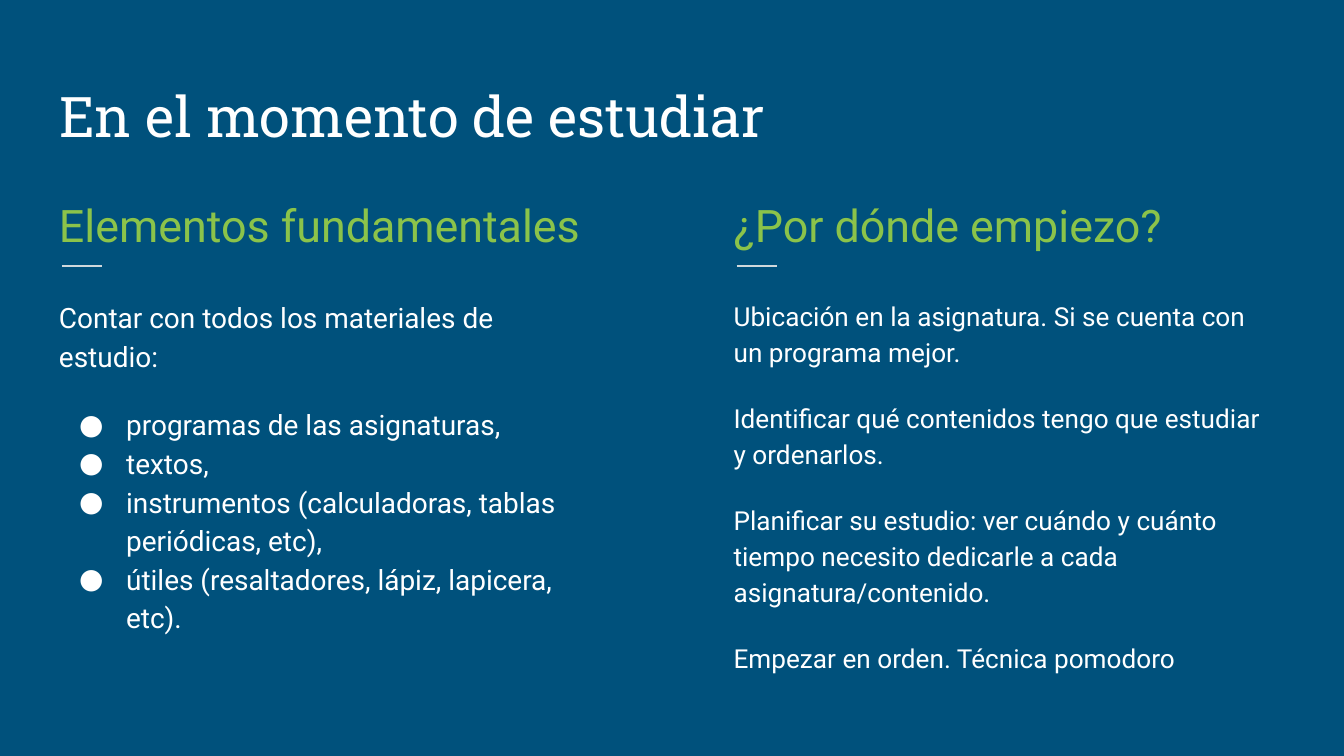
import pptx
import pptx.util
import pptx.dml.color
import pptx.enum.shapes
import pptx.enum.text
import pptx.oxml.ns
import lxml.etree

TITLE = "En el momento de estudiar"
COLUMNS = [
    {
        "left": 0.34,
        "heading": "Elementos fundamentales",
        "size": 15,
        "space_after": 0,
        "items": [
            ("text", "Contar con todos los materiales de estudio:"),
            ("bullet", "programas de las asignaturas,"),
            ("bullet", "textos,"),
            ("bullet", "instrumentos (calculadoras, tablas periódicas, etc),"),
            ("bullet", "útiles (resaltadores, lápiz, lapicera, etc)."),
        ],
    },
    {
        "left": 5.36,
        "heading": "¿Por dónde empiezo?",
        "size": 14,
        "space_after": 16,
        "items": [
            ("text", "Ubicación en la asignatura. Si se cuenta con un programa mejor."),
            ("text", "Identificar qué contenidos tengo que estudiar y ordenarlos."),
            ("text", "Planificar su estudio: ver cuándo y cuánto tiempo necesito "
                     "dedicarle a cada asignatura/contenido."),
            ("text", "Empezar en orden. Técnica pomodoro"),
        ],
    },
]
THEME = {
    "background": "00517C", "text": "FFFFFF", "heading": "8BC34A", "rule": "CFD8DC",
    "title_font": "Roboto Slab", "body_font": "Roboto",
    "title_size": 30, "heading_size": 24,
    "line_spacing": 1.15, "gap": 16, "rule_width": 0.75,
}
COLUMN_WIDTH = 4.21
INSET = 0.1
RULE_OFFSET, RULE_LENGTH, RULE_TOP = 0.12, 0.3, 1.98

Inches = pptx.util.Inches
Pt = pptx.util.Pt


def color(name):
    return pptx.dml.color.RGBColor.from_string(THEME[name])


def prepare_frame(box, anchor):
    frame = box.text_frame
    frame.word_wrap = True
    frame.auto_size = pptx.enum.text.MSO_AUTO_SIZE.NONE
    frame.vertical_anchor = anchor
    frame.margin_left = frame.margin_right = Inches(INSET)
    frame.margin_top = frame.margin_bottom = Inches(INSET)
    return frame


def write(para, text, font, size, ink):
    para.text = text
    para.alignment = pptx.enum.text.PP_ALIGN.LEFT
    for span in para.runs:
        span.font.name = THEME[font]
        span.font.size = Pt(size)
        span.font.color.rgb = color(ink)


def add_bullet(para):
    properties = para._p.get_or_add_pPr()
    properties.set("marL", str(Inches(0.5)))
    properties.set("indent", str(Inches(-0.35)))
    qn = pptx.oxml.ns.qn
    bullet_color = lxml.etree.SubElement(properties, qn("a:buClr"))
    lxml.etree.SubElement(bullet_color, qn("a:srgbClr"), val=THEME["text"])
    lxml.etree.SubElement(properties, qn("a:buFont"), typeface=THEME["body_font"])
    lxml.etree.SubElement(properties, qn("a:buChar"), char="●")


def add_text_box(slide, left, top, height):
    box = slide.shapes.add_textbox(
        Inches(left), Inches(top), Inches(COLUMN_WIDTH), Inches(height))
    return prepare_frame(box, pptx.enum.text.MSO_ANCHOR.TOP)


def add_rule(slide, left):
    rule = slide.shapes.add_connector(
        pptx.enum.shapes.MSO_CONNECTOR.STRAIGHT,
        Inches(left), Inches(RULE_TOP), Inches(left + RULE_LENGTH), Inches(RULE_TOP))
    rule.line.color.rgb = color("rule")
    rule.line.width = Pt(THEME["rule_width"])
    lxml.etree.SubElement(rule._element.spPr, pptx.oxml.ns.qn("a:effectLst"))


def add_column(slide, column):
    heading = add_text_box(slide, column["left"], 1.31, 0.57).paragraphs[0]
    write(heading, column["heading"], "body_font", THEME["heading_size"], "heading")
    heading.line_spacing = THEME["line_spacing"]
    heading.space_after = Pt(THEME["gap"])

    add_rule(slide, column["left"] + RULE_OFFSET)

    frame = add_text_box(slide, column["left"], 2.1, 3.01)
    previous = None
    for kind, text in column["items"]:
        para = frame.add_paragraph() if previous else frame.paragraphs[0]
        write(para, text, "body_font", column["size"], "text")
        para.line_spacing = THEME["line_spacing"]
        para.space_before = Pt(THEME["gap"] if previous == "text" else 0)
        if kind == "bullet":
            add_bullet(para)
        previous = kind
    para.space_after = Pt(column["space_after"])


def main():
    deck = pptx.Presentation()
    deck.slide_width = Inches(10)
    deck.slide_height = deck.slide_width * 9 // 16
    slide = deck.slides.add_slide(deck.slide_layouts.get_by_name("Title Only"))
    slide.background.fill.solid()
    slide.background.fill.fore_color.rgb = color("background")

    title = slide.shapes.title
    title.left, title.top = Inches(0.34), Inches(0.41)
    title.width, title.height = Inches(9.32), Inches(0.8)
    frame = prepare_frame(title, pptx.enum.text.MSO_ANCHOR.BOTTOM)
    write(frame.paragraphs[0], TITLE, "title_font", THEME["title_size"], "text")

    for column in COLUMNS:
        add_column(slide, column)
    deck.save("out.pptx")


if __name__ == "__main__":
    main()
